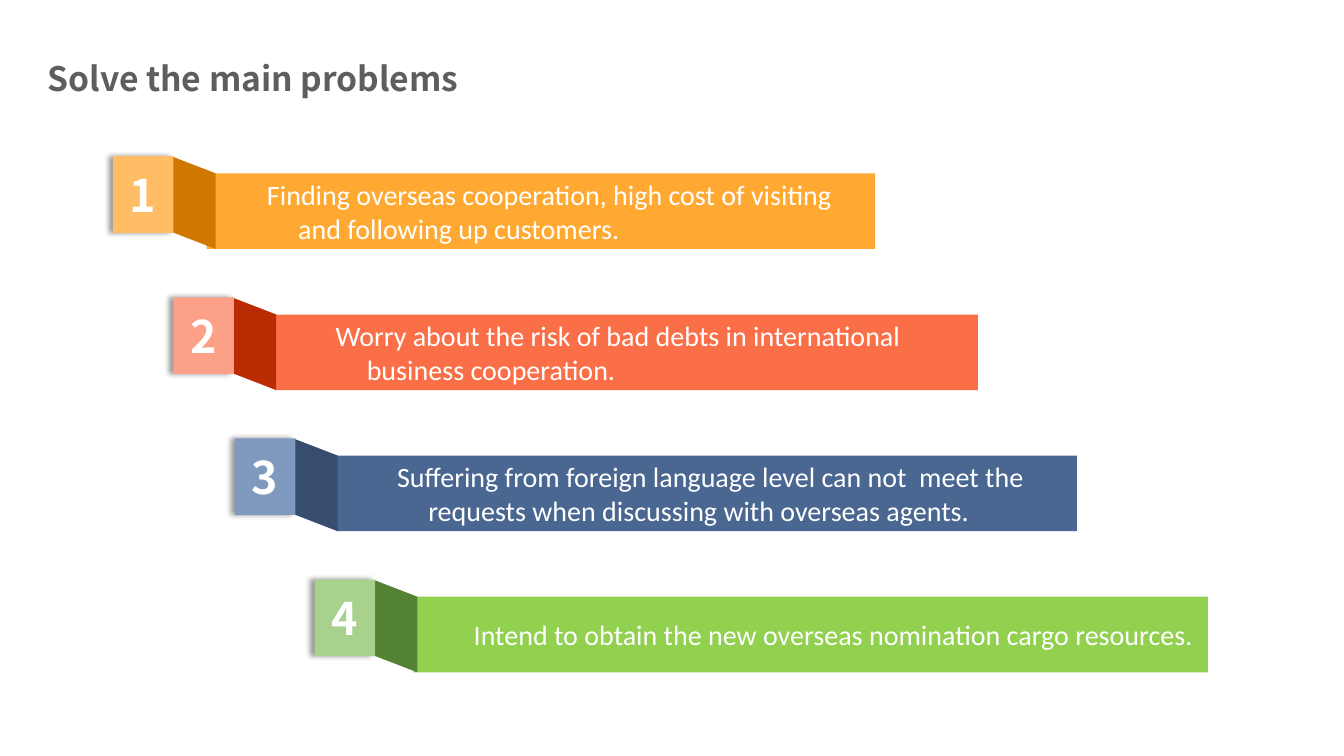
"""Build a slide with four stepped ribbon banners listing the main problems."""
from lxml.etree import SubElement
from pptx import Presentation
from pptx.dml.color import RGBColor
from pptx.enum.shapes import MSO_SHAPE as Shape
from pptx.enum.text import MSO_ANCHOR as Anchor, PP_ALIGN as Align
from pptx.oxml.ns import qn
from pptx.util import Pt

PX = 9144
WHITE = RGBColor(0xFF, 0xFF, 0xFF)
GREY = RGBColor(0x5F, 0x5E, 0x5C)
ORANGE = RGBColor(0xFF, 0xA9, 0x32)
AMBER = RGBColor(0xD0, 0x77, 0x00)
PEACH = RGBColor(0xFF, 0xBD, 0x65)
CORAL = RGBColor(0xFA, 0x6F, 0x48)
RUST = RGBColor(0xBB, 0x2C, 0x05)
PINK = RGBColor(0xFC, 0xA1, 0x88)
BLUE = RGBColor(0x4A, 0x67, 0x91)
NAVY = RGBColor(0x37, 0x4D, 0x6D)
SKY = RGBColor(0x80, 0x99, 0xBE)
LIME = RGBColor(0x92, 0xD0, 0x50)
GREEN = RGBColor(0x54, 0x82, 0x35)
SAGE = RGBColor(0xA9, 0xD1, 0x8E)
HEAD = "Noto Sans CJK SC"
BODY = "Calibri"
TOP, STEP = 155, 140

ROWS = [
    (112, 205, 663, ORANGE, AMBER, PEACH,
     "Finding overseas cooperation, high cost of visiting and following up customers."),
    (172, 273, 697, CORAL, RUST, PINK,
     "Worry about the risk of bad debts in international business cooperation."),
    (233, 334, 734, BLUE, NAVY, SKY,
     "Suffering from foreign language level can not  meet the requests when discussing with overseas agents."),
    (312, 410, 788, LIME, GREEN, SAGE,
     "Intend to obtain the new overseas nomination cargo resources."),
]


def paint(shape, color):
    shape.shadow.inherit = False
    shape.fill.solid()
    shape.fill.fore_color.rgb = color
    shape.line.fill.background()


def write(shape, text, font, size, color, bold, align):
    shape.text_frame.vertical_anchor = Anchor.MIDDLE
    para = shape.text_frame.paragraphs[0]
    para.alignment = align
    run = para.add_run()
    run.text = text
    run.font.name = font
    run.font.size = Pt(size)
    run.font.bold = bold
    run.font.color.rgb = color
    for tag in ("a:ea", "a:cs"):
        SubElement(run.font._element, qn(tag), typeface=font)
    return para


deck = Presentation()
deck.slide_width = 1333 * PX
deck.slide_height = 750 * PX
slide = deck.slides.add_slide(deck.slide_layouts[5])
shapes = slide.shapes

title = shapes.title
title.left, title.top, title.width, title.height = [n * PX for n in (37, 52, 543, 50)]
write(title, "Solve the main problems", HEAD, 24, GREY, True, Align.LEFT)

for i, (left, start, width, main, dark, light, text) in enumerate(ROWS):
    top = TOP + i * STEP

    bar = shapes.add_shape(Shape.RECTANGLE, start * PX, (top + 17) * PX, width * PX, 75 * PX)
    paint(bar, main)
    para = write(bar, text, BODY, 20, WHITE, False, Align.LEFT)
    para.level = 1
    props = para._p.get_or_add_pPr()
    props.set("marL", str(81 * PX))
    props.set("indent", str(-31 * PX))

    x = left + 58
    pen = shapes.build_freeform(x, top, scale=PX)
    pen.add_line_segments([(x, top + 75), (x + 44, top + 92), (x + 44, top + 17)], close=True)
    paint(pen.convert_to_shape(), dark)

    badge = shapes.add_shape(Shape.RECTANGLE, left * PX, top * PX, 60 * PX, 76 * PX)
    paint(badge, light)
    write(badge, str(i + 1), HEAD, 32, WHITE, True, Align.CENTER)
    glow = badge._element.spPr.find(qn("a:effectLst"))
    shade = SubElement(glow, qn("a:outerShdw"), blurRad=str(Pt(4)), dist=str(Pt(3)),
                       dir="10800000", algn="r", rotWithShape="0")
    black = SubElement(shade, qn("a:srgbClr"), val="000000")
    SubElement(black, qn("a:alpha"), val="40000")

deck.save("out.pptx")
